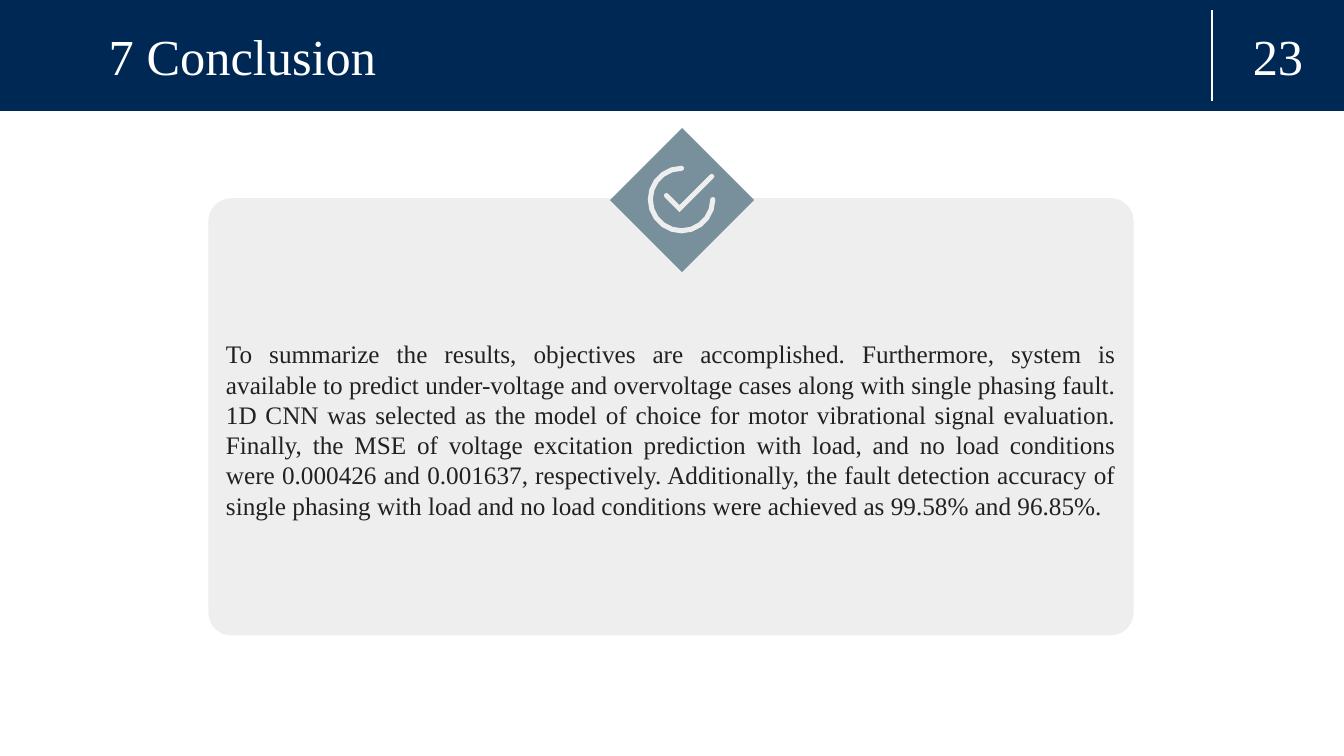
from math import cos, sin, pi, hypot, radians
from pptx import Presentation
from pptx.dml.color import RGBColor
from pptx.enum.shapes import MSO_SHAPE as SHAPE, MSO_CONNECTOR as CONN
from pptx.enum.text import MSO_ANCHOR as ANCHOR, PP_ALIGN as ALIGN
from pptx.oxml.ns import qn
from pptx.util import Inches, Pt
from lxml import etree

WHITE = RGBColor(0xFF, 0xFF, 0xFF)
INK = RGBColor(0x21, 0x21, 0x21)
NAVY = RGBColor(0x00, 0x28, 0x55)
PALE = RGBColor(0xEE, 0xEE, 0xEE)
SLATE = RGBColor(0x78, 0x90, 0x9C)
W, H = 13.33, 7.5
BAR = 1.1
RULE_X = W - 1.31
ICON_X, ICON_Y, ICON_R = 6.76, 1.98, 0.31
CONCLUSION = (
    "To summarize the results, objectives are accomplished. Furthermore, system is "
    "available to predict under-voltage and overvoltage cases along with single phasing fault. "
    "1D CNN was selected as the model of choice for motor vibrational signal evaluation. "
    "Finally, the MSE of voltage excitation prediction with load, and no load conditions "
    "were 0.000426 and 0.001637, respectively. Additionally, the fault detection accuracy of "
    "single phasing with load and no load conditions were achieved as 99.58% and 96.85%."
)


def write(sp, text, size=36, color=WHITE, align=ALIGN.LEFT, top=0.1, bottom=0.1):
    tf = sp.text_frame
    tf.word_wrap = True
    tf.vertical_anchor = ANCHOR.MIDDLE
    tf.margin_left = tf.margin_right = Inches(0.1)
    tf.margin_top, tf.margin_bottom = Inches(top), Inches(bottom)
    p = tf.paragraphs[0]
    p.alignment = align
    r = p.add_run()
    r.text = text
    r.font.name = "Times New Roman"
    r.font.size = Pt(size)
    r.font.color.rgb = color
    return p


def stroke_outline(points, half):
    outline = []
    for side in (points, points[::-1]):
        steps = [(c - a, d - b) for (a, b), (c, d) in zip(side, side[1:])]
        units = [(dx / hypot(dx, dy), dy / hypot(dx, dy)) for dx, dy in steps]
        for (x, y), (ax, ay), (bx, by) in zip(side[1:], units, units[1:]):
            k = half / (1 + ax * bx + ay * by)
            outline.append((x - (ay + by) * k, y + (ax + bx) * k))
        (x, y), (dx, dy) = side[-1], units[-1]
        for t in [pi * i / 4 for i in range(5)]:
            outline.append((x + half * (dx * sin(t) - dy * cos(t)),
                            y + half * (dy * sin(t) + dx * cos(t))))
    return [(Inches(x), Inches(y)) for x, y in outline]


prs = Presentation()
prs.slide_width, prs.slide_height = Inches(W), Inches(H)
s = prs.slides.add_slide(prs.slide_layouts[6])
s.background.fill.solid()
s.background.fill.fore_color.rgb = INK

shapes = []
for kind, x, y, w, h, fill, line in [
    (SHAPE.RECTANGLE, 0, BAR, W, H - BAR, WHITE, 2),
    (SHAPE.RECTANGLE, 0, 0, W, BAR, NAVY, 0.75),
    (SHAPE.ROUNDED_RECTANGLE, 2.08, 1.98, 9.15, 4.31, PALE, 2),
    (SHAPE.DIAMOND, 6.05, 1.27, 1.43, 1.43, SLATE, 0),
]:
    sp = s.shapes.add_shape(kind, Inches(x), Inches(y), Inches(w), Inches(h))
    sp.shadow.inherit = False
    sp.fill.solid()
    sp.fill.fore_color.rgb = fill
    if line:
        sp.line.color.rgb = fill
        sp.line.width = Pt(line)
    else:
        sp.line.fill.background()
    shapes.append(sp)

card = shapes[2]
card.adjustments[0] = 0.05
write(card, CONCLUSION, size=18, color=INK, align=ALIGN.JUSTIFY, top=0.3, bottom=0.05)

rule = s.shapes.add_connector(CONN.STRAIGHT, Inches(RULE_X), Inches(1), Inches(RULE_X), Inches(0.1))
rule.line.color.rgb = WHITE
rule.line.width = Pt(1.5)
etree.SubElement(rule._element.spPr, qn("a:effectLst"))

number = s.shapes.add_textbox(Inches(RULE_X), Inches(0.1), Inches(W - RULE_X), Inches(0.89))
write(number, "23", align=ALIGN.CENTER)
title = s.shapes.add_textbox(Inches(0.73), Inches(0.1), Inches(11.08), Inches(0.89))
p = write(title, "7 Conclusion")
pPr = p._p.get_or_add_pPr()
pPr.set("marL", str(Inches(0.5)))
pPr.set("indent", str(Inches(-0.25)))

tick = [(6.61, 1.94), (6.74, 2.07), (7.06, 1.75)]
ring = [(ICON_X + ICON_R * cos(radians(a)), ICON_Y + ICON_R * sin(radians(a)))
        for a in range(0, 271, 18)]
icon = s.shapes.add_group_shape()
for points in (tick, ring):
    outline = stroke_outline(points, 0.025)
    fb = icon.shapes.build_freeform(*outline[0])
    fb.add_line_segments(outline[1:], close=True)
    sp = fb.convert_to_shape()
    sp.shadow.inherit = False
    sp.fill.solid()
    sp.fill.fore_color.rgb = PALE
    sp.line.fill.background()

prs.save("out.pptx")
